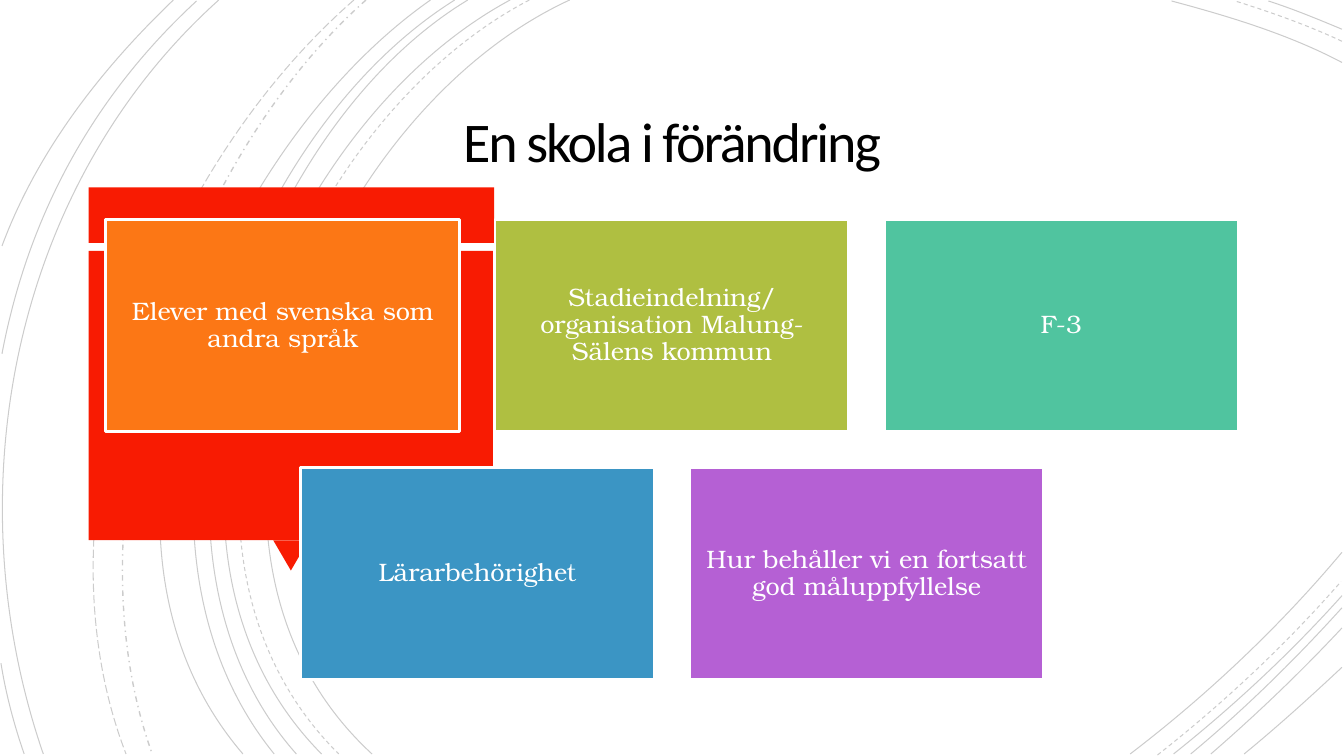
"""Build the slide "En skola i förändring" with five topic cards over curved background lines."""
from dataclasses import dataclass

from lxml import etree
from pptx import Presentation
from pptx.dml.color import RGBColor
from pptx.enum.dml import MSO_LINE
from pptx.enum.shapes import MSO_SHAPE
from pptx.enum.text import MSO_ANCHOR, MSO_AUTO_SIZE, PP_ALIGN
from pptx.oxml.ns import qn
from pptx.slide import Slide
from pptx.text.text import TextFrame
from pptx.util import Emu, Pt

PX = 9144
SOLID, DASH = MSO_LINE.SOLID, MSO_LINE.DASH
DASH_DOT, LONG_DASH = MSO_LINE.DASH_DOT, MSO_LINE.LONG_DASH
RECTANGLE, TRIANGLE = MSO_SHAPE.RECTANGLE, MSO_SHAPE.ISOSCELES_TRIANGLE
MIDDLE, CENTER, NO_FIT = MSO_ANCHOR.MIDDLE, PP_ALIGN.CENTER, MSO_AUTO_SIZE.NONE

BLACK = RGBColor(0x00, 0x00, 0x00)
WHITE = RGBColor(0xFF, 0xFF, 0xFF)
RED = RGBColor(0xF8, 0x1B, 0x02)
ORANGE = RGBColor(0xFC, 0x77, 0x15)
OLIVE = RGBColor(0xAF, 0xBF, 0x41)
TEAL = RGBColor(0x50, 0xC4, 0x9F)
BLUE = RGBColor(0x3B, 0x95, 0xC4)
PURPLE = RGBColor(0xB5, 0x60, 0xD4)

TITLE_FONT, CARD_FONT = "Calibri", "TeX Gyre Bonum"
ARC_OPACITY = "20000"
CARD_LEFT, CARD_TOP, CARD_WIDTH, CARD_HEIGHT = 105, 218, 351, 210
COLUMN_PITCH, ROW_PITCH = 386, 246

Point = tuple[int, int]


@dataclass(frozen=True)
class Arc:
    """A cubic curve: start, two control points and end, in px."""

    start: Point
    first: Point
    second: Point
    end: Point
    dash: MSO_LINE = SOLID
    weight: float = 0.75


@dataclass(frozen=True)
class Block:
    """A filled preset shape, in px."""

    left: int
    top: int
    width: int
    height: int
    color: RGBColor
    preset: MSO_SHAPE = RECTANGLE
    rotation: int = 0


@dataclass(frozen=True)
class Card:
    """A topic card placed by row and by half columns."""

    row: int
    half_column: int
    color: RGBColor
    label: str


ARCS = (
    Arc((565, 0), (315, 115), (143, 540), (369, 748)),
    Arc((1331, 62), (1278, 34), (1218, 16), (1162, 1)),
    Arc((1121, 748), (1197, 690), (1269, 622), (1331, 548)),
    Arc((525, 0), (285, 125), (123, 537), (336, 748), DASH),
    Arc((1331, 41), (1297, 25), (1260, 12), (1225, 1), DASH),
    Arc((1148, 749), (1213, 698), (1275, 640), (1330, 577), DASH),
    Arc((506, 0), (270, 127), (110, 537), (319, 748)),
    Arc((1331, 29), (1307, 19), (1283, 9), (1258, 1)),
    Arc((1164, 748), (1223, 701), (1280, 648), (1331, 591)),
    Arc((464, 0), (244, 133), (110, 541), (294, 748)),
    Arc((1181, 748), (1234, 704), (1284, 655), (1331, 603)),
    Arc((451, 0), (231, 138), (97, 533), (272, 748)),
    Arc((1201, 748), (1246, 709), (1290, 667), (1331, 623)),
    Arc((427, 0), (217, 147), (53, 529), (241, 748)),
    Arc((1234, 748), (1267, 721), (1299, 692), (1331, 662)),
    Arc((363, 0), (176, 166), (65, 509), (151, 748), DASH_DOT, 1),
    Arc((351, 0), (157, 169), (29, 499), (125, 748), LONG_DASH),
    Arc((217, 0), (11, 185), (-46, 490), (43, 748)),
    Arc((195, 1), (92, 96), (28, 214), (2, 351)),
    Arc((1, 658), (6, 689), (14, 719), (24, 748)),
    Arc((172, 0), (100, 69), (37, 150), (2, 244)),
)

CALLOUT = (
    Block(88, 186, 402, 55, RED),
    Block(271, 536, 35, 30, RED, TRIANGLE, 180),
    Block(88, 249, 401, 287, RED),
)

CARDS = (
    Card(0, 0, ORANGE, "Elever med svenska som andra språk"),
    Card(0, 2, OLIVE, "Stadieindelning/organisation Malung-Sälens kommun"),
    Card(0, 4, TEAL, "F-3"),
    Card(1, 1, BLUE, "Lärarbehörighet"),
    Card(1, 3, PURPLE, "Hur behåller vi en fortsatt god måluppfyllelse"),
)


def px(length: int) -> Emu:
    """Turn px into EMU."""
    return Emu(length * PX)


def draw_arc(page: Slide, arc: Arc) -> None:
    """Draw one faint curve."""
    builder = page.shapes.build_freeform(*arc.start, scale=PX)
    builder.add_line_segments((arc.first, arc.second, arc.end), close=False)
    curve = builder.convert_to_shape()
    curve.shadow.inherit = False
    curve.fill.background()
    curve.line.width = Pt(arc.weight)
    curve.line.color.rgb = BLACK
    curve.line.dash_style = arc.dash
    outline = curve.line.color._xFill.find(qn("a:srgbClr"))
    etree.SubElement(outline, qn("a:alpha"), val=ARC_OPACITY)
    segments = list(curve._element.iter(qn("a:lnTo")))
    bezier = etree.SubElement(segments[0].getparent(), qn("a:cubicBezTo"))
    for segment in segments:
        bezier.append(segment[0])
        segment.getparent().remove(segment)


def draw_block(page: Slide, block: Block):
    """Draw one filled shape without an outline and return it."""
    box = page.shapes.add_shape(
        block.preset, px(block.left), px(block.top), px(block.width), px(block.height)
    )
    box.shadow.inherit = False
    box.rotation = block.rotation
    box.fill.solid()
    box.fill.fore_color.rgb = block.color
    box.line.fill.background()
    return box


def write(frame: TextFrame, text: str, font: str, size: int, color: RGBColor,
          inset: int, spacing: float):
    """Write one centred run and return it."""
    frame.word_wrap = True
    frame.auto_size = NO_FIT
    frame.vertical_anchor = MIDDLE
    frame.margin_left = frame.margin_right = px(inset)
    frame.margin_top = frame.margin_bottom = px(inset)
    para = frame.paragraphs[0]
    para.alignment = CENTER
    para.line_spacing = spacing
    span = para.add_run()
    span.text = text
    span.font.name = font
    span.font.size = Pt(size)
    span.font.color.rgb = color
    return span


def place_title(page: Slide) -> None:
    """Format the title placeholder and lift it above the background."""
    title = page.shapes.title
    title.left, title.top = px(192), px(87)
    title.width, title.height = px(949), px(115)
    span = write(title.text_frame, "En skola i förändring", TITLE_FONT, 40, BLACK, 25, 0.85)
    span.font._element.set("spc", "-150")
    page.shapes._spTree.append(title._element)


def draw_card(page: Slide, card: Card) -> None:
    """Draw one outlined topic card with its label."""
    left = CARD_LEFT + card.half_column * COLUMN_PITCH // 2
    top = CARD_TOP + card.row * ROW_PITCH
    box = draw_block(page, Block(left, top, CARD_WIDTH, CARD_HEIGHT, card.color))
    box.line.color.rgb = WHITE
    box.line.width = Pt(2)
    write(box.text_frame, card.label, CARD_FONT, 18, WHITE, 7, 0.9)


def main() -> None:
    """Build and save the deck."""
    deck = Presentation()
    deck.slide_width, deck.slide_height = px(1333), px(750)
    page = deck.slides.add_slide(deck.slide_layouts[5])
    page.background.fill.solid()
    page.background.fill.fore_color.rgb = WHITE
    for arc in ARCS:
        draw_arc(page, arc)
    for block in CALLOUT:
        draw_block(page, block)
    place_title(page)
    for card in CARDS:
        draw_card(page, card)
    deck.save("out.pptx")


if __name__ == "__main__":
    main()
